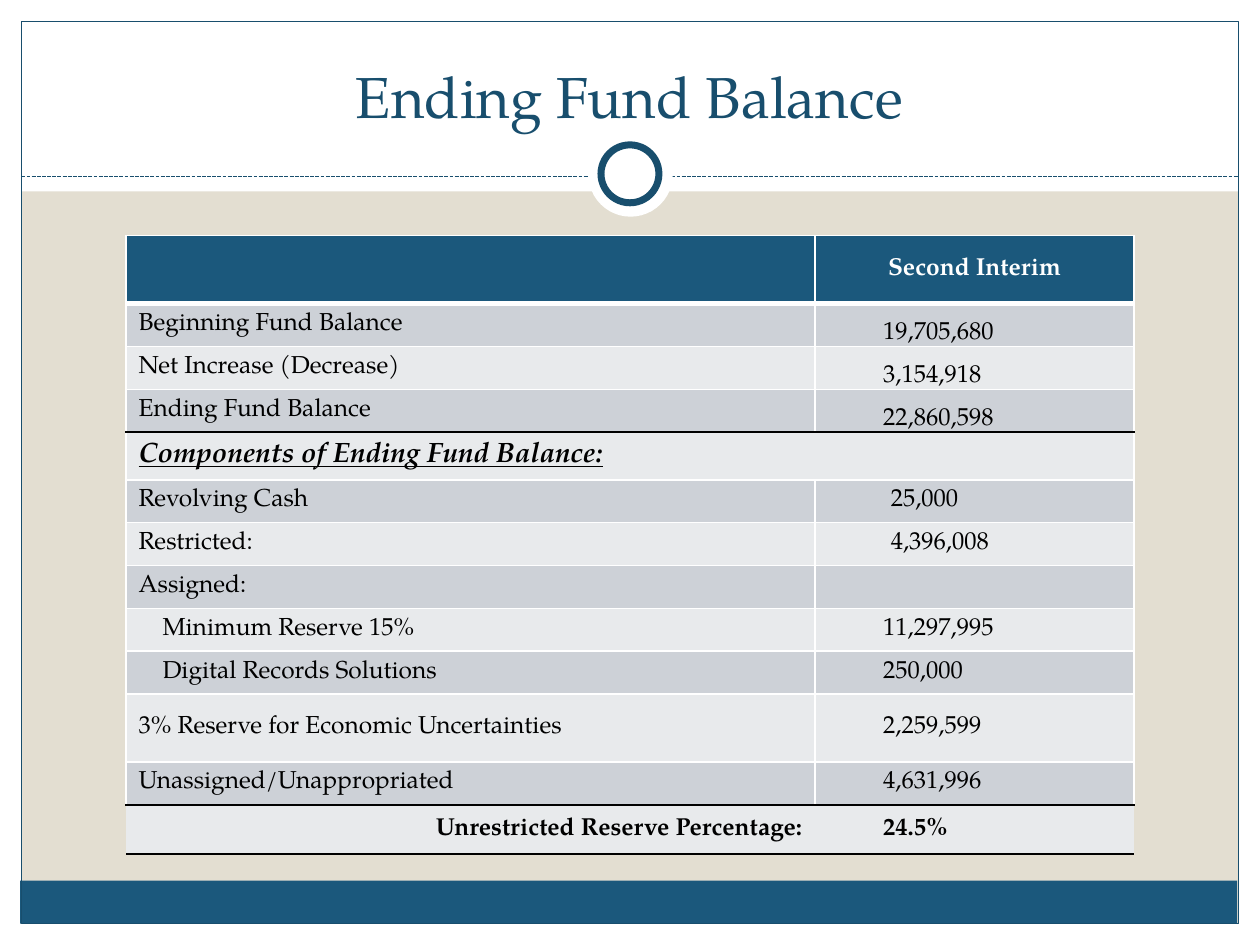
"""Build the Ending Fund Balance slide."""
from dataclasses import dataclass

from lxml import etree
from pptx import Presentation
from pptx.dml.color import RGBColor
from pptx.enum.dml import MSO_LINE
from pptx.enum.shapes import MSO_CONNECTOR, MSO_SHAPE
from pptx.enum.text import MSO_ANCHOR, PP_ALIGN
from pptx.oxml.ns import qn
from pptx.util import Inches, Pt

RECTANGLE, OVAL = MSO_SHAPE.RECTANGLE, MSO_SHAPE.OVAL
MIDDLE, BOTTOM = MSO_ANCHOR.MIDDLE, MSO_ANCHOR.BOTTOM
LEFT, CENTER, RIGHT = PP_ALIGN.LEFT, PP_ALIGN.CENTER, PP_ALIGN.RIGHT
FONT = "TeX Gyre Pagella"
WHITE, BLACK, NAVY, BLUE, SAND = "FFFFFF", "000000", "184E6D", "1B587C", "E3DED1"
BANDS = ("E8EAEC", "CDD1D7")
VALUE_INDENT = 0.54


@dataclass
class Decoration:
    """A plain shape of the page frame."""
    kind: int
    left: float
    top: float
    width: float
    height: float
    fill: str | None = WHITE
    line_width: float = 0


@dataclass
class BalanceRow:
    """A label with its amount and row layout."""
    label: str
    value: str
    height: float = 0.34
    label_indent: float = 0.1
    value_indent: float = VALUE_INDENT
    value_anchor: int = MIDDLE
    rule: tuple[str, float] = (WHITE, 1)


DECORATIONS = [
    Decoration(RECTANGLE, 0, 7.33, 10, 0.17),
    Decoration(RECTANGLE, 0, 0, 10, 1.52),
    Decoration(RECTANGLE, 0, 0, 0.17, 7.5),
    Decoration(RECTANGLE, 9.83, 0, 0.17, 7.5),
    Decoration(RECTANGLE, 0.16, 6.99, 9.66, 0.34, BLUE),
    Decoration(RECTANGLE, 0.17, 0.17, 9.66, 7.16, None, 0.75),
]
RINGS = [
    Decoration(OVAL, 4.67, 1.05, 0.67, 0.67),
    Decoration(OVAL, 4.77, 1.15, 0.46, 0.46, WHITE, 4),
]
ROWS = [
    BalanceRow("", "Second Interim", 0.54, value_indent=0.1, rule=(WHITE, 3)),
    BalanceRow("Beginning Fund Balance", "19,705,680", value_anchor=BOTTOM),
    BalanceRow("Net Increase (Decrease)", "3,154,918", value_anchor=BOTTOM),
    BalanceRow("Ending Fund Balance", "22,860,598", value_anchor=BOTTOM, rule=(BLACK, 1)),
    BalanceRow("Components of Ending Fund Balance:", "", 0.38),
    BalanceRow("Revolving Cash", "25,000", value_indent=0.6),
    BalanceRow("Restricted:", "4,396,008", value_indent=0.6),
    BalanceRow("Assigned:", ""),
    BalanceRow("Minimum Reserve 15%", "11,297,995", label_indent=0.29),
    BalanceRow("Digital Records Solutions", "250,000", label_indent=0.29),
    BalanceRow("3% Reserve for Economic Uncertainties", "2,259,599", 0.54),
    BalanceRow("Unassigned/Unappropriated", "4,631,996", rule=(BLACK, 1)),
    BalanceRow("Unrestricted Reserve Percentage:", "24.5%", 0.39, rule=(BLACK, 1)),
]
HEADER, SECTION, TOTAL = 0, 4, len(ROWS) - 1


def color(value: str) -> RGBColor:
    """Turn a hex string into a colour."""
    return RGBColor.from_string(value)


def draw_decoration(page, item: Decoration) -> None:
    """Draw one shape of the page frame."""
    shape = page.shapes.add_shape(
        item.kind, *map(Inches, (item.left, item.top, item.width, item.height)))
    shape.shadow.inherit = False
    if item.fill:
        shape.fill.solid()
        shape.fill.fore_color.rgb = color(item.fill)
    else:
        shape.fill.background()
    if item.line_width:
        shape.line.color.rgb = color(NAVY)
        shape.line.width = Pt(item.line_width)
    else:
        shape.line.fill.background()


def draw_divider(page) -> None:
    """Draw the dashed line under the title."""
    divider = page.shapes.add_connector(
        MSO_CONNECTOR.STRAIGHT, Inches(0.17), Inches(1.4), Inches(9.83), Inches(1.4))
    divider.line.color.rgb = color(NAVY)
    divider.line.width = Pt(0.75)
    divider.line.dash_style = MSO_LINE.SQUARE_DOT
    etree.SubElement(divider._element.spPr, qn("a:effectLst"))


def style_paragraph(para, size: float, font_color: str, align: int, bold: bool = False) -> None:
    """Set the font and alignment of a paragraph."""
    para.alignment = align
    para.font.name = FONT
    para.font.size = Pt(size)
    para.font.bold = bold
    para.font.color.rgb = color(font_color)


def set_title(page) -> None:
    """Fill the title and bring it to the front."""
    title = page.shapes.title
    title.left, title.top, title.width, title.height = map(Inches, (0.33, 0.25, 9.33, 0.83))
    title.text_frame.text = "Ending Fund Balance"
    title.text_frame.vertical_anchor = BOTTOM
    para = title.text_frame.paragraphs[0]
    style_paragraph(para, 33, NAVY, CENTER)
    para.space_after = Pt(6)
    page.shapes._spTree.append(title._element)


def set_border(cell, side: str, line_color: str | None, width: float) -> None:
    """Add one border line to a cell."""
    line = etree.SubElement(cell._tc.get_or_add_tcPr(), qn(f"a:ln{side}"), w=str(Pt(width)))
    if line_color is None:
        etree.SubElement(line, qn("a:noFill"))
        return
    fill = etree.SubElement(line, qn("a:solidFill"))
    etree.SubElement(fill, qn("a:srgbClr"), val=line_color)


def fill_cell(cell, text: str, index: int, indent: float, anchor: int, align: int) -> None:
    """Write and format one table cell."""
    row = ROWS[index]
    edge = None if index == TOTAL else WHITE
    above = ROWS[index - 1].rule if index else (WHITE, 1)
    for side, rule in (("L", (edge, 1)), ("R", (edge, 1)), ("T", above), ("B", row.rule)):
        set_border(cell, side, *rule)
    cell.fill.solid()
    cell.fill.fore_color.rgb = color(BLUE if index == HEADER else BANDS[index % 2])
    cell.vertical_anchor = anchor
    cell.margin_left = Inches(indent)
    if anchor == BOTTOM or not text:
        cell.margin_top = cell.margin_bottom = 0
    cell.text = text
    para = cell.text_frame.paragraphs[0]
    section = index == SECTION
    style_paragraph(para, 16 if section else 14, WHITE if index == HEADER else BLACK,
                    align, index in (HEADER, SECTION, TOTAL))
    para.font.italic = para.font.underline = section


def draw_table(page) -> None:
    """Draw the fund balance table."""
    height = sum(row.height for row in ROWS)
    table = page.shapes.add_table(
        len(ROWS), 2, Inches(1), Inches(1.87), Inches(8), Inches(height)).table
    table.first_row = table.horz_banding = False
    for column, width in zip(table.columns, (5.47, 2.53)):
        column.width = Inches(width)
    for index, row in enumerate(ROWS):
        table.rows[index].height = Inches(row.height)
        label, value = table.cell(index, 0), table.cell(index, 1)
        fill_cell(label, row.label, index, row.label_indent, MIDDLE,
                  RIGHT if index == TOTAL else LEFT)
        fill_cell(value, row.value, index, row.value_indent, row.value_anchor,
                  CENTER if index == HEADER else LEFT)
    table.cell(SECTION, 0).merge(table.cell(SECTION, 1))


def main() -> None:
    """Build and save the deck."""
    deck = Presentation()
    deck.slide_width, deck.slide_height = Inches(10), Inches(7.5)
    page = deck.slides.add_slide(deck.slide_layouts[5])
    page.background.fill.solid()
    page.background.fill.fore_color.rgb = color(SAND)
    for item in DECORATIONS:
        draw_decoration(page, item)
    draw_divider(page)
    for ring in RINGS:
        draw_decoration(page, ring)
    set_title(page)
    draw_table(page)
    deck.save("out.pptx")


if __name__ == "__main__":
    main()
